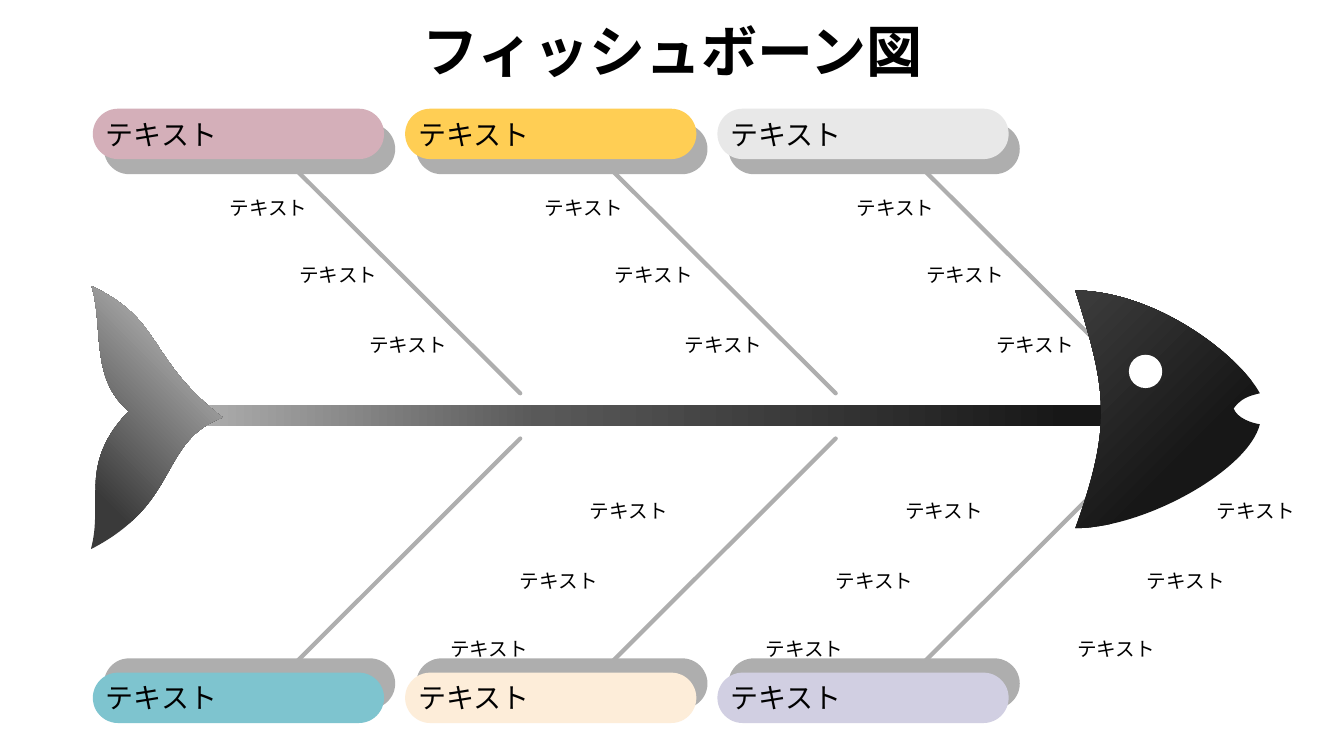
"""Build a fishbone diagram slide with six branches and their labels."""
import pptx
import pptx.dml.color
import pptx.enum.shapes
import pptx.enum.text
import pptx.oxml
import pptx.oxml.ns
import pptx.util

Cm, Pt = pptx.util.Cm, pptx.util.Pt
RGB = pptx.dml.color.RGBColor.from_string
qn = pptx.oxml.ns.qn
SHAPES = pptx.enum.shapes.MSO_SHAPE
ALIGN = pptx.enum.text.PP_ALIGN
ANCHOR = pptx.enum.text.MSO_ANCHOR
AUTO = pptx.enum.text.MSO_AUTO_SIZE

COLORS = {
    "text": "000000", "eye": "FFFFFF", "light": "AEAEAE", "mid": "595959",
    "dark": "3A3A3A", "black": "171717", "rose": "D4AFB9", "yellow": "FFCE54",
    "silver": "E8E8E8", "teal": "7EC4CF", "cream": "FDEDD9", "lilac": "D1CFE2",
}
FRAME = {"margin_left": 0, "margin_top": 0, "margin_right": 0, "margin_bottom": 0,
         "word_wrap": True, "auto_size": AUTO.SHAPE_TO_FIT_TEXT}
HEADING = {"frame": FRAME, "font": {"size": Pt(20)}, "line": {"alignment": ALIGN.LEFT}}
CAUSE = {"frame": {**FRAME, "margin_right": Cm(0.25)}, "font": {"size": Pt(14)},
         "line": {"alignment": ALIGN.RIGHT}}
TITLE = {"frame": {"word_wrap": True, "vertical_anchor": ANCHOR.MIDDLE},
         "font": {"size": Pt(40), "bold": True},
         "line": {"alignment": ALIGN.CENTER, "line_spacing": 0.9}}

deck = pptx.Presentation()
deck.slide_width, deck.slide_height = Cm(33.87), Cm(19.05)
slide = deck.slides.add_slide(deck.slide_layouts[6])


def paint(shape, stops, angle=0):
    """Fill with one colour name, or with a gradient of (position, name) stops."""
    shape.shadow.inherit = False
    shape.line.fill.background()
    if isinstance(stops, str):
        shape.fill.solid()
        shape.fill.fore_color.rgb = RGB(COLORS[stops])
        return
    shape.fill.gradient()
    shape.fill.gradient_angle = angle
    stop_list = shape._element.spPr.find(".//" + qn("a:gsLst"))
    for old_stop in list(stop_list):
        stop_list.remove(old_stop)
    for position, name in stops:
        stop = pptx.oxml.ns.nsdecls("a")
        stop_list.append(pptx.oxml.parse_xml(
            f'<a:gs {stop} pos="{position * 1000}"><a:srgbClr val="{COLORS[name]}"/></a:gs>'))


def write(text, left, top, width, height, style):
    """Place a text box and apply its format values."""
    box = slide.shapes.add_textbox(Cm(left), Cm(top), Cm(width), Cm(height))
    line = box.text_frame.paragraphs[0]
    line.text = text
    font = line.runs[0].font
    font.name = "TeX Gyre Adventor"
    font.color.rgb = RGB(COLORS["text"])
    for target, values in ((box.text_frame, style["frame"]), (font, style["font"]),
                           (line, style["line"])):
        for key, value in values.items():
            setattr(target, key, value)


column_step, pill_width, pill_height = 7.87, 7.34, 1.27
for shade_top in (16.59, 3.12):
    for column in range(3):
        shade = slide.shapes.add_shape(
            SHAPES.ROUNDED_RECTANGLE, Cm(2.62 + column * column_step), Cm(shade_top),
            Cm(pill_width), Cm(pill_height))
        shade.adjustments[0] = 0.5
        paint(shade, "light")

for outer, inner in ((4.19, 9.91), (16.78, 11.05)):
    for bone_left in (7.37, 15.32, 23.19):
        bone = slide.shapes.add_connector(
            pptx.enum.shapes.MSO_CONNECTOR.STRAIGHT,
            Cm(bone_left), Cm(outer), Cm(bone_left + 5.74), Cm(inner))
        bone.line.width = Pt(3)
        bone.line.color.rgb = RGB(COLORS["light"])
        bone.line._get_or_add_ln().set("cap", "rnd")
        bone._element.spPr.append(pptx.oxml.parse_xml(
            f'<a:effectLst {pptx.oxml.ns.nsdecls("a")}/>'))

spine = slide.shapes.add_shape(
    SHAPES.ROUNDED_RECTANGLE, Cm(4.93), Cm(10.21), Cm(24.74), Cm(0.53))
spine.adjustments[0] = 0.5
paint(spine, [(0, "light"), (35, "mid"), (89, "black")])

tail_points = [
    (561, 1052),
    (399, 1113), (457, 1267), (229, 1384),
    (262, 1267), (196, 1168), (325, 1036),
    (226, 955), (262, 826), (231, 721),
    (414, 808), (368, 902), (561, 1052),
]
head_points = [
    (3109, 1029),
    (3117, 1054), (3157, 1067), (3175, 1069),
    (3147, 1184), (2885, 1331), (2710, 1331),
    (2804, 1069), (2789, 983), (2710, 732),
    (2916, 734), (3124, 897), (3175, 991),
    (3147, 998), (3129, 1003), (3109, 1029),
]
for points, stops, angle in (
        (tail_points, [(18, "dark"), (80, "light")], 45),
        (head_points, [(33, "black"), (96, "dark")], 135)):
    builder = slide.shapes.build_freeform(*points[0], scale=Cm(0.01))
    builder.add_line_segments(points[1:], close=True)
    fish_part = builder.convert_to_shape()
    outline = fish_part._element.spPr.find(".//" + qn("a:path"))
    segments = outline.findall(qn("a:lnTo"))
    for first in range(0, len(points) - 1, 3):
        curve = pptx.oxml.parse_xml(f'<a:cubicBezTo {pptx.oxml.ns.nsdecls("a")}/>')
        segments[first].addprevious(curve)
        for segment in segments[first:first + 3]:
            curve.append(segment[0])
            outline.remove(segment)
    paint(fish_part, stops, angle)

eye = slide.shapes.add_shape(SHAPES.OVAL, Cm(28.45), Cm(8.94), Cm(0.84), Cm(0.84))
paint(eye, "eye")

for pill_top, heading_top, names in (
        (2.74, 2.97, ("rose", "yellow", "silver")),
        (16.95, 17.15, ("teal", "cream", "lilac"))):
    for column, name in enumerate(names):
        pill_left = 2.34 + column * column_step
        pill = slide.shapes.add_shape(
            SHAPES.ROUNDED_RECTANGLE, Cm(pill_left), Cm(pill_top),
            Cm(pill_width), Cm(pill_height))
        pill.adjustments[0] = 0.5
        paint(pill, name)
        write("テキスト", pill_left + 0.33, heading_top, 6.68, 0.86, HEADING)

for shift, cause_tops in ((0, (4.93, 6.63, 8.38)), (5.56, (16.05, 14.33, 12.57))):
    for cause_left in (2.34, 10.29, 18.14):
        for row, cause_top in enumerate(cause_tops):
            write("テキスト", cause_left + shift + row * 1.76, cause_top, 5.66, 0.61, CAUSE)

write("フィッシュボーン図", 10.24, 0, 13.41, 2.74, TITLE)

deck.save("out.pptx")
